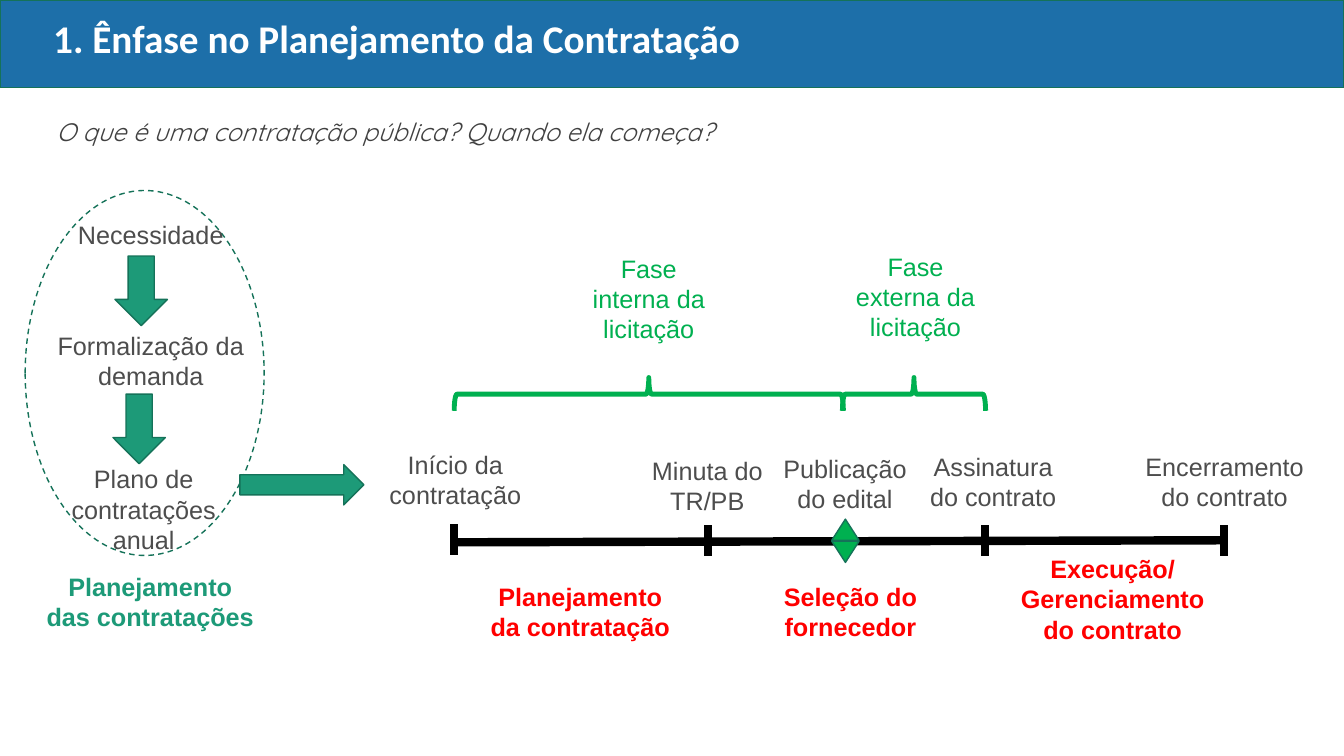
"""Build a slide on the planning emphasis in public contracting."""
import lxml.etree
import pptx
import pptx.dml.color
import pptx.enum.dml
import pptx.enum.shapes
import pptx.enum.text
import pptx.oxml.ns
import pptx.util

Inches = pptx.util.Inches
Pt = pptx.util.Pt
Color = pptx.dml.color.RGBColor.from_string
Preset = pptx.enum.shapes.MSO_SHAPE
Align = pptx.enum.text.PP_ALIGN
Anchor = pptx.enum.text.MSO_ANCHOR
AutoSize = pptx.enum.text.MSO_AUTO_SIZE


class Theme:
    banner = "1D6FA9"
    outline = "157259"
    teal = "1D9A78"
    green = "00B050"
    red = "FF0000"
    grey = "4D4D4D"
    question = "404040"
    white = "FFFFFF"
    black = "000000"
    title_size = 28
    body_size = 18
    thin = 1
    brace = 3.5
    axis = 6


deck = pptx.Presentation()
deck.slide_width = Inches(13.33)
deck.slide_height = Inches(7.5)
page = deck.slides.add_slide(deck.slide_layouts[6])


def add_text(text, left, top, width, height, *, color=Theme.grey, size=Theme.body_size,
             font="Arial", bold=False, italic=False, align=Align.CENTER,
             anchor=Anchor.TOP, spacing=1.0, fit=AutoSize.SHAPE_TO_FIT_TEXT):
    box = page.shapes.add_textbox(Inches(left), Inches(top), Inches(width), Inches(height))
    frame = box.text_frame
    frame.word_wrap = True
    frame.auto_size = fit
    frame.vertical_anchor = anchor
    for index, line in enumerate(text.split("\n")):
        para = frame.add_paragraph() if index else frame.paragraphs[0]
        para.alignment = align
        para.line_spacing = spacing
        span = para.add_run()
        span.text = line
        span.font.name = font
        span.font.size = Pt(size)
        span.font.bold = bold
        span.font.italic = italic
        span.font.color.rgb = Color(color)


def add_figure(preset, left, top, width, height, *, fill=None, line=Theme.outline,
               weight=Theme.thin, rotation=0):
    shape = page.shapes.add_shape(preset, Inches(left), Inches(top), Inches(width), Inches(height))
    shape.shadow.inherit = False
    shape.rotation = rotation
    if fill:
        shape.fill.solid()
        shape.fill.fore_color.rgb = Color(fill)
    else:
        shape.fill.background()
    shape.line.color.rgb = Color(line)
    shape.line.width = Pt(weight)
    return shape


add_figure(Preset.RECTANGLE, 0, 0, 13.33, 0.87, fill=Theme.banner)
add_text("1. Ênfase no Planejamento da Contratação", 0.43, 0, 11.5, 0.81,
         color=Theme.white, size=Theme.title_size, font="Calibri", bold=True,
         align=Align.LEFT, anchor=Anchor.MIDDLE, spacing=0.9, fit=AutoSize.NONE)
add_text("O que é uma contratação pública? Quando ela começa?", 0.46, 1.11, 11.95, 0.4,
         color=Theme.question, font="Quicksand", italic=True, align=Align.JUSTIFY)

planning_oval = add_figure(Preset.OVAL, 0.25, 1.89, 2.37, 3.62)
planning_oval.line.dash_style = pptx.enum.dml.MSO_LINE.DASH

axis_start, axis_end = 4.5, 12.14
timeline = [(axis_start, 5.38, axis_end, 5.36), (axis_start, 5.2, axis_start, 5.51)]
timeline += [(x, 5.21, x, 5.52) for x in (7.02, 9.77, axis_end)]
for ends in timeline:
    stroke = page.shapes.add_connector(pptx.enum.shapes.MSO_CONNECTOR.STRAIGHT,
                                       *[Inches(value) for value in ends])
    stroke.line.color.rgb = Color(Theme.black)
    stroke.line.width = Pt(Theme.axis)
    lxml.etree.SubElement(stroke._element.spPr, pptx.oxml.ns.qn("a:effectLst"))

for text, left, top, width, height in [
    ("Necessidade", 0.47, 2.13, 2.05, 0.4),
    ("Formalização da demanda", 0.47, 3.23, 2.05, 0.7),
    ("Plano de contratações anual", 0.4, 4.55, 2.05, 1.01),
    ("Início da contratação", 3.49, 4.41, 2.05, 0.7),
    ("Minuta do TR/PB", 5.99, 4.47, 2.05, 0.7),
    ("Publicação do edital", 7.57, 4.45, 1.62, 0.7),
    ("Assinatura do contrato", 9.04, 4.43, 1.62, 0.7),
    ("Encerramento do contrato", 11.24, 4.43, 1.81, 0.7),
]:
    add_text(text, left, top, width, height)

for text, left, top, width, height, color in [
    ("Planejamento das contratações", 0.33, 5.62, 2.32, 0.7, Theme.teal),
    ("Planejamento da contratação", 4.73, 5.72, 2.05, 0.7, Theme.red),
    ("Seleção do fornecedor", 7.41, 5.72, 2.05, 0.7, Theme.red),
    ("Execução/\nGerenciamento do contrato", 10.01, 5.44, 2.05, 1.01, Theme.red),
]:
    add_text(text, left, top, width, height, color=color, bold=True)

for preset, left, top, width, height in [
    (Preset.DOWN_ARROW, 1.14, 2.54, 0.52, 0.69),
    (Preset.DOWN_ARROW, 1.12, 3.91, 0.52, 0.69),
    (Preset.RIGHT_ARROW, 2.38, 4.61, 1.23, 0.4),
]:
    add_figure(preset, left, top, width, height, fill=Theme.teal)

for top, rotation in [(5.15, 0), (5.37, 180)]:
    add_figure(Preset.ISOSCELES_TRIANGLE, 8.25, top, 0.27, 0.21,
               fill=Theme.green, rotation=rotation)

for left, top, span_length in [(6.27, 1.98, 3.86), (8.9, 3.2, 1.42)]:
    add_figure(Preset.RIGHT_BRACE, left, top, 0.33, span_length,
               line=Theme.green, weight=Theme.brace, rotation=270)

for text, left, top, width in [
    ("Fase interna da licitação", 5.75, 2.46, 1.37),
    ("Fase externa da licitação", 8.37, 2.44, 1.42),
]:
    add_text(text, left, top, width, 1.01, color=Theme.green)

deck.save("out.pptx")
